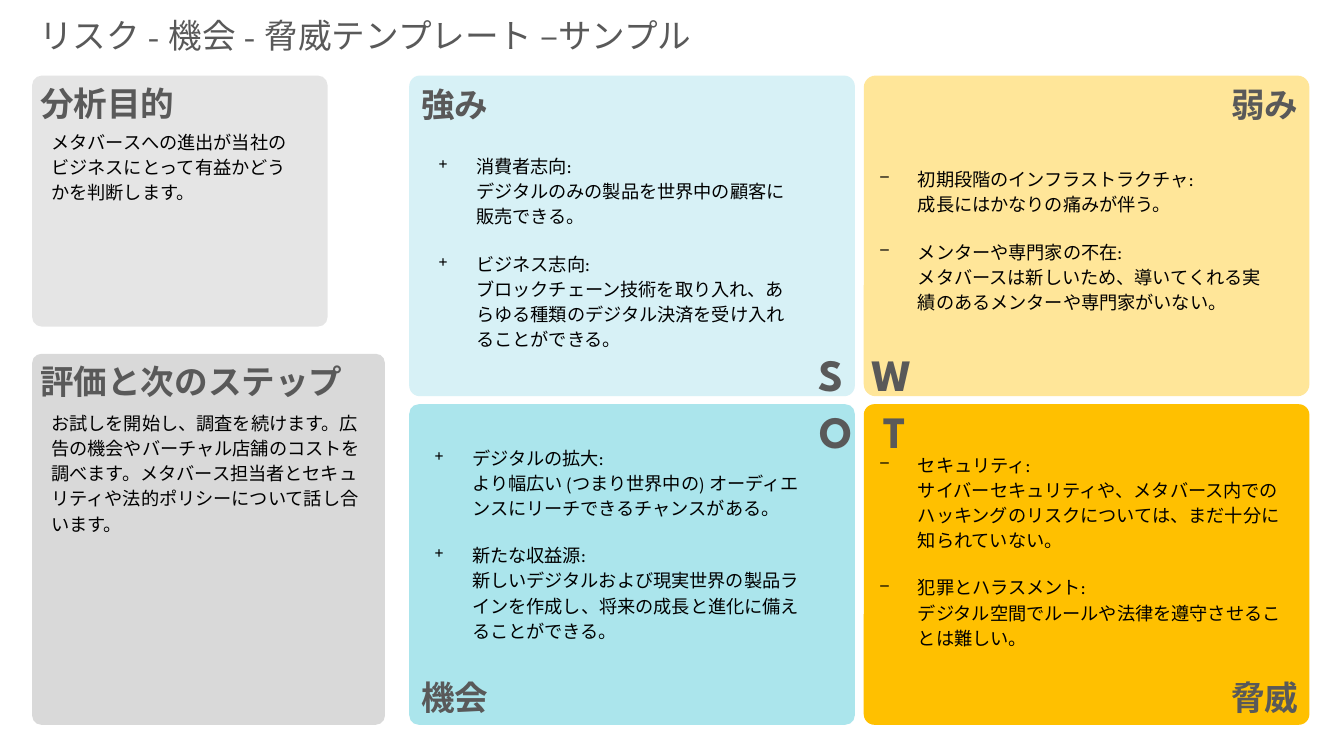
from copy import deepcopy

from lxml import etree
from pptx import Presentation
from pptx import util as u
from pptx.dml.color import RGBColor
from pptx.enum import lang, shapes, text
from pptx.oxml import ns

FONT = "League Spartan"
GREY, BLACK = "595959", "000000"
LEFT, RIGHT = text.PP_ALIGN.LEFT, text.PP_ALIGN.RIGHT
COLS, ROWS = (292.3, 617), (54, 288.7)
WIDE, HIGH = 318.3, 229

# colour, corner, list box, bullet, items; keyed by column and row
QUADS = {
    (0, 0): ("D7F1F6", 0.033, (302.4, 87.1, 266.4, 184.3), "+", [
        "消費者志向: \nデジタルのみの製品を世界中の顧客に販売できる。",
        "ビジネス志向: \nブロックチェーン技術を取り入れ、あらゆる種類のデジタル決済を"
        "受け入れることができる。"]),
    (1, 0): ("FFE699", 0.037, (617.8, 87.8, 294.5, 166.3), "−", [
        "初期段階のインフラストラクチャ: \n成長にはかなりの痛みが伴う。",
        "メンターや専門家の不在: \nメタバースは新しいため、導いてくれる実績のある"
        "メンターや専門家がいない。"]),
    (0, 1): ("ABE5EC", 0.03, (299.5, 288, 278.6, 199.4), "+", [
        "デジタルの拡大: \nより幅広い (つまり世界中の) オーディエンスにリーチできる"
        "チャンスがある。",
        "新たな収益源: \n新しいデジタルおよび現実世界の製品ラインを作成し、"
        "将来の成長と進化に備えることができる。"]),
    (1, 1): ("FFC000", 0.033, (617.8, 293, 308.2, 199.4), "−", [
        "セキュリティ: \nサイバーセキュリティや、メタバース内でのハッキングのリスクに"
        "ついては、まだ十分に知られていない。",
        "犯罪とハラスメント: \nデジタル空間でルールや法律を遵守させることは難しい。"]),
}

# colour, corner, box, heading, text box, text
NOTES = [
    ("E5E5E5", 0.038, (23, 54, 211, 179.3), "分析目的", (25.9, 87.8, 187.2, 114.5),
     "メタバースへの進出が当社のビジネスにとって有益かどうかを判断します。"),
    ("D9D9D9", 0.026, (23, 252.7, 252, 265), "評価と次のステップ",
     (25.9, 288.7, 248.4, 194.4),
     "お試しを開始し、調査を続けます。広告の機会やバーチャル店舗のコストを調べます。"
     "メタバース担当者とセキュリティや法的ポリシーについて話し合います。"),
]

HEADS = [
    ("強み", (293.8, 56.2, 304.6, 36), LEFT),
    ("弱み", (630, 56.2, 304.6, 36), RIGHT),
    ("機会", (293.8, 480.2, 304.6, 36), LEFT),
    ("脅威", (630, 480.2, 304.6, 36), RIGHT),
]

MARKS = [
    ("S", (341.3, 244.1, 268.6, 67.7), RIGHT),
    ("W", (615.6, 244.1, 275, 67.7), LEFT),
    ("O", (341.3, 285.1, 275, 46), RIGHT),
    ("T", (624.2, 285.1, 266.4, 48.2), LEFT),
]


def paint(hue):
    return RGBColor.from_string(hue)


def place(box):
    return [u.Pt(v) for v in box]


def apply(item, **vals):
    for name, val in vals.items():
        setattr(item, name, val)


def panel(slide, box, hue, curve):
    card = slide.shapes.add_shape(
        shapes.MSO_SHAPE.ROUNDED_RECTANGLE, *place(box))
    card.adjustments[0] = curve
    card.shadow.inherit = False
    card.fill.solid()
    card.fill.fore_color.rgb = paint(hue)
    card.line.fill.background()


def frame(slide, box, **vals):
    body = slide.shapes.add_textbox(*place(box)).text_frame
    apply(body, word_wrap=True, **vals)
    return body


def write(para, words, size, hue, bold=False):
    """Fill a paragraph, giving its line breaks the format of its runs."""
    para.text = words
    for run in para.runs:
        apply(run.font, name=FONT, size=u.Pt(size), bold=bold,
              language_id=lang.MSO_LANGUAGE_ID.JAPANESE)
        run.font.color.rgb = paint(hue)
    for gap in para._p.findall(ns.qn("a:br")):
        gap.append(deepcopy(para.runs[0]._r.rPr))


def label(slide, words, box, size=24, align=LEFT, bold=True):
    para = frame(slide, box).paragraphs[0]
    para.alignment = align
    write(para, words, size, GREY, bold)


def prose(slide, box, items, sign=None):
    """Add body text, as a bulleted list when a sign is given."""
    anchor = text.MSO_ANCHOR.MIDDLE if sign else text.MSO_ANCHOR.TOP
    body = frame(slide, box, margin_left=u.Pt(10.8), vertical_anchor=anchor)
    for i, words in enumerate(items):
        para = body.add_paragraph() if i else body.paragraphs[0]
        apply(para, line_spacing=1.15, space_before=u.Pt(16 if i else 0))
        if sign:
            props = para._p.get_or_add_pPr()
            props.set("marL", str(u.Pt(27)))
            props.set("indent", str(u.Pt(-27)))
            etree.SubElement(props, ns.qn("a:buFont"), typeface=FONT)
            etree.SubElement(props, ns.qn("a:buChar"), char=sign)
        write(para, words, 13, BLACK)


def main():
    deck = Presentation()
    apply(deck, slide_width=u.Pt(960), slide_height=u.Pt(540))
    slide = deck.slides.add_slide(deck.slide_layouts[6])
    label(slide, "リスク - 機会 - 脅威テンプレート –サンプル",
          (20.9, 7.2, 665.3, 36), bold=False)
    for hue, curve, box, head, area, words in NOTES:
        panel(slide, box, hue, curve)
        label(slide, head, (21.6, box[1] + 1.5, 252, 36))
        prose(slide, area, [words])
    for (col, row), (hue, curve, *_) in QUADS.items():
        panel(slide, (COLS[col], ROWS[row], WIDE, HIGH), hue, curve)
    for _, _, area, sign, items in QUADS.values():
        prose(slide, area, items, sign)
    for words, box, align in HEADS:
        label(slide, words, box, align=align)
    for words, box, align in MARKS:
        label(slide, words, box, 32, align)
    deck.save("out.pptx")


if __name__ == "__main__":
    main()
